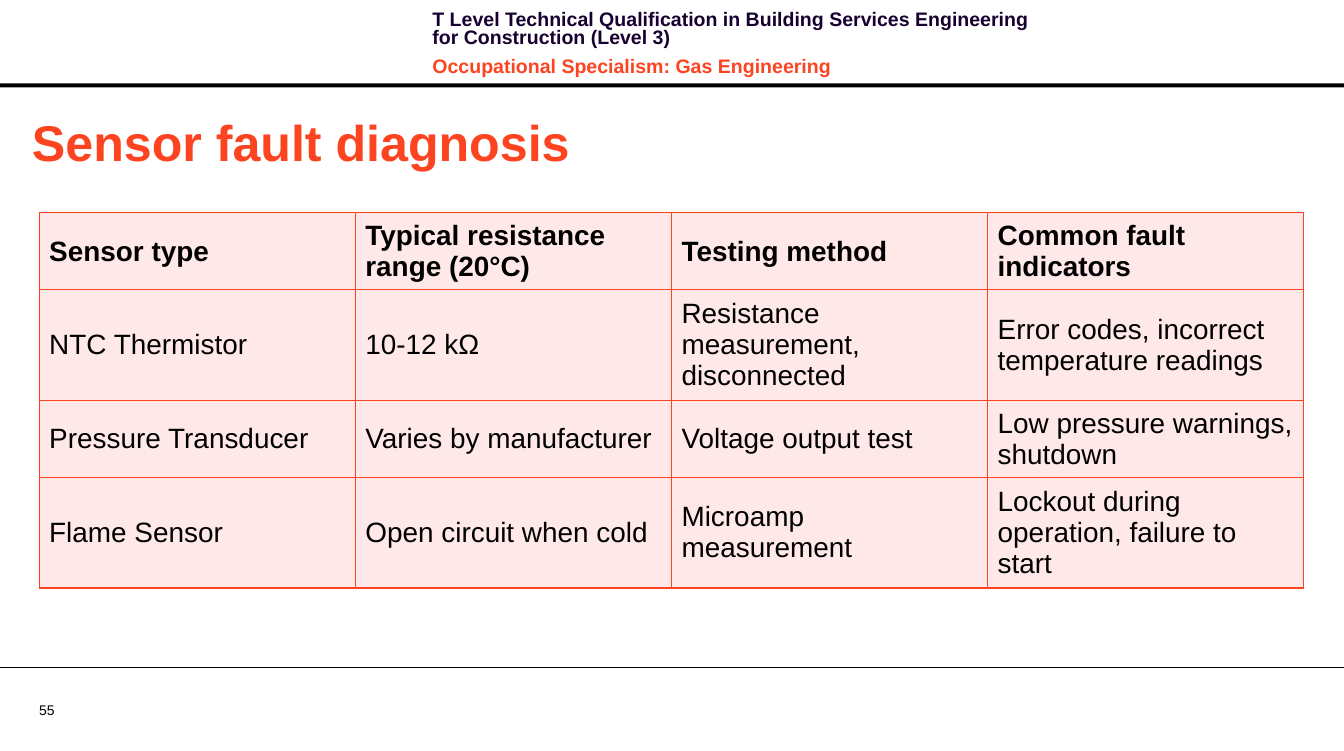
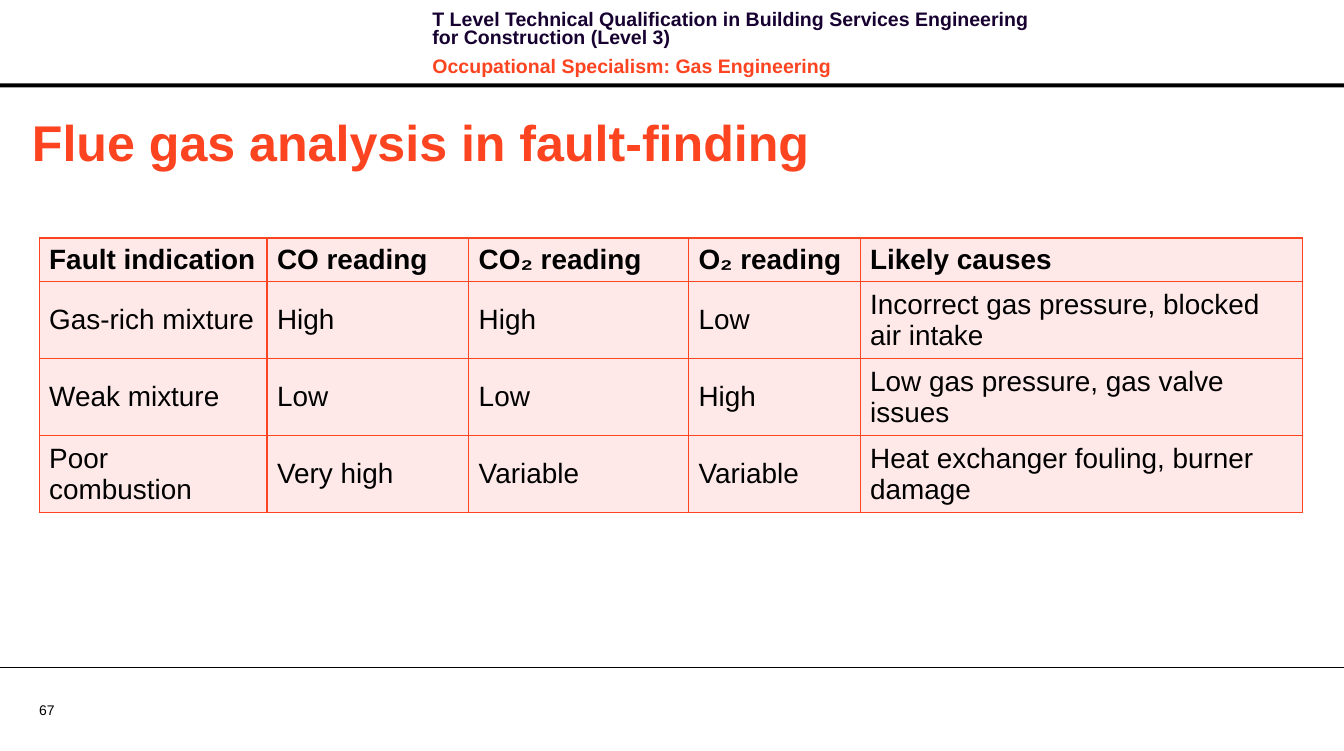
import pptx
import pptx.dml.color
import pptx.enum.shapes
import pptx.enum.text
import pptx.oxml.ns
import pptx.util
from lxml import etree

Inches = pptx.util.Inches
Pt = pptx.util.Pt
MIDDLE = pptx.enum.text.MSO_ANCHOR.MIDDLE
TOP = pptx.enum.text.MSO_ANCHOR.TOP

COURSE = "T Level Technical Qualification in Building Services Engineering for Construction (Level 3)"
SPECIALISM = "Occupational Specialism: Gas Engineering"


class Deck:
    colours = {"accent": "FC4421", "navy": "170130", "black": "000000", "cell": "FEE9E8"}
    font = "Arial"
    width, height = 13.39, 7.48

    def __init__(self):
        self.presentation = pptx.Presentation()
        self.presentation.slide_width = Inches(self.width)
        self.presentation.slide_height = Inches(self.height)
        self.slide = None

    def colour(self, name):
        return pptx.dml.color.RGBColor.from_string(self.colours[name])

    def add_run(self, paragraph, text, size, colour="black", bold=False):
        run = paragraph.add_run()
        run.text = text
        run.font.name = self.font
        run.font.size = Pt(size)
        run.font.bold = bold
        run.font.color.rgb = self.colour(colour)

    def text_frame(self, left, top, width, height, anchor=MIDDLE):
        box = self.slide.shapes.add_textbox(Inches(left), Inches(top), Inches(width), Inches(height))
        frame = box.text_frame
        frame.word_wrap = True
        frame.vertical_anchor = anchor
        return frame

    def band(self):
        shape = self.slide.shapes.add_shape(
            pptx.enum.shapes.MSO_SHAPE.RECTANGLE, 0, Inches(0.83), Inches(self.width), Inches(0.04))
        shape.shadow.inherit = False
        shape.fill.solid()
        shape.fill.fore_color.rgb = self.colour("black")
        shape.line.fill.background()

    def header(self):
        frame = self.text_frame(4.21, 0.07, 6.37, 0.64, TOP)
        for index, (text, colour) in enumerate([(COURSE, "navy"), (SPECIALISM, "accent")]):
            paragraph = frame.add_paragraph() if index else frame.paragraphs[0]
            paragraph.line_spacing = Pt(13.1)
            paragraph.space_before = Pt(4 if index else 0)
            paragraph.space_after = Pt(4)
            self.add_run(paragraph, text, 14, colour, True)

    def footer(self, number):
        line = self.slide.shapes.add_connector(
            pptx.enum.shapes.MSO_CONNECTOR.STRAIGHT, 0, Inches(6.65), Inches(self.width), Inches(6.65))
        line.line.color.rgb = self.colour("black")
        line.line.width = Pt(0.75)
        etree.SubElement(line._element.spPr, pptx.oxml.ns.qn("a:effectLst"))
        frame = self.text_frame(0.39, 6.99, 0.64, 0.17)
        frame.margin_left = frame.margin_right = frame.margin_top = frame.margin_bottom = 0
        self.add_run(frame.paragraphs[0], str(number), 10)

    def new_slide(self, title, number):
        self.slide = self.presentation.slides.add_slide(self.presentation.slide_layouts[6])
        self.band()
        self.header()
        self.footer(number)
        frame = self.text_frame(0.22, 1.05, 12.72, 0.71)
        self.add_run(frame.paragraphs[0], title, 36, "accent", True)

    def cell_borders(self, cell):
        qn = pptx.oxml.ns.qn
        properties = cell._tc.get_or_add_tcPr()
        for side in ("lnL", "lnR", "lnT", "lnB"):
            border = etree.SubElement(properties, qn("a:" + side), w=str(Pt(1)))
            fill = etree.SubElement(border, qn("a:solidFill"))
            etree.SubElement(fill, qn("a:srgbClr"), val=self.colours["accent"])

    def table(self, top, column_widths, row_lines, rows):
        row_heights = [0.1 + 0.31 * lines for lines in row_lines]
        table = self.slide.shapes.add_table(
            len(rows), len(column_widths), Inches(0.39), Inches(top),
            Inches(sum(column_widths)), Inches(sum(row_heights))).table
        table.horz_banding = False
        for column, width in zip(table.columns, column_widths):
            column.width = Inches(width)
        for row_index, texts in enumerate(rows):
            table.rows[row_index].height = Inches(row_heights[row_index])
            for column_index, text in enumerate(texts):
                cell = table.cell(row_index, column_index)
                self.cell_borders(cell)
                cell.fill.solid()
                cell.fill.fore_color.rgb = self.colour("cell")
                cell.vertical_anchor = MIDDLE
                self.add_run(cell.text_frame.paragraphs[0], text, 20, bold=row_index == 0)


def main():
    deck = Deck()

    deck.new_slide("Sensor fault diagnosis", 55)
    deck.table(2.12, [3.15] * 4, [2, 3, 2, 3], [
        ["Sensor type", "Typical resistance range (20°C)", "Testing method", "Common fault indicators"],
        ["NTC Thermistor", "10-12 kΩ", "Resistance measurement, disconnected",
         "Error codes, incorrect temperature readings"],
        ["Pressure Transducer", "Varies by manufacturer", "Voltage output test",
         "Low pressure warnings, shutdown"],
        ["Flame Sensor", "Open circuit when cold", "Microamp measurement",
         "Lockout during operation, failure to start"],
    ])

    deck.new_slide("Flue gas analysis in fault-finding", 67)
    deck.table(2.37, [2.27, 2.01, 2.19, 1.71, 4.41], [1, 2, 2, 2], [
        ["Fault indication", "CO reading", "CO₂ reading", "O₂ reading", "Likely causes"],
        ["Gas-rich mixture", "High", "High", "Low", "Incorrect gas pressure, blocked air intake"],
        ["Weak mixture", "Low", "Low", "High", "Low gas pressure, gas valve issues"],
        ["Poor combustion", "Very high", "Variable", "Variable", "Heat exchanger fouling, burner damage"],
    ])

    deck.presentation.save("out.pptx")


if __name__ == "__main__":
    main()
